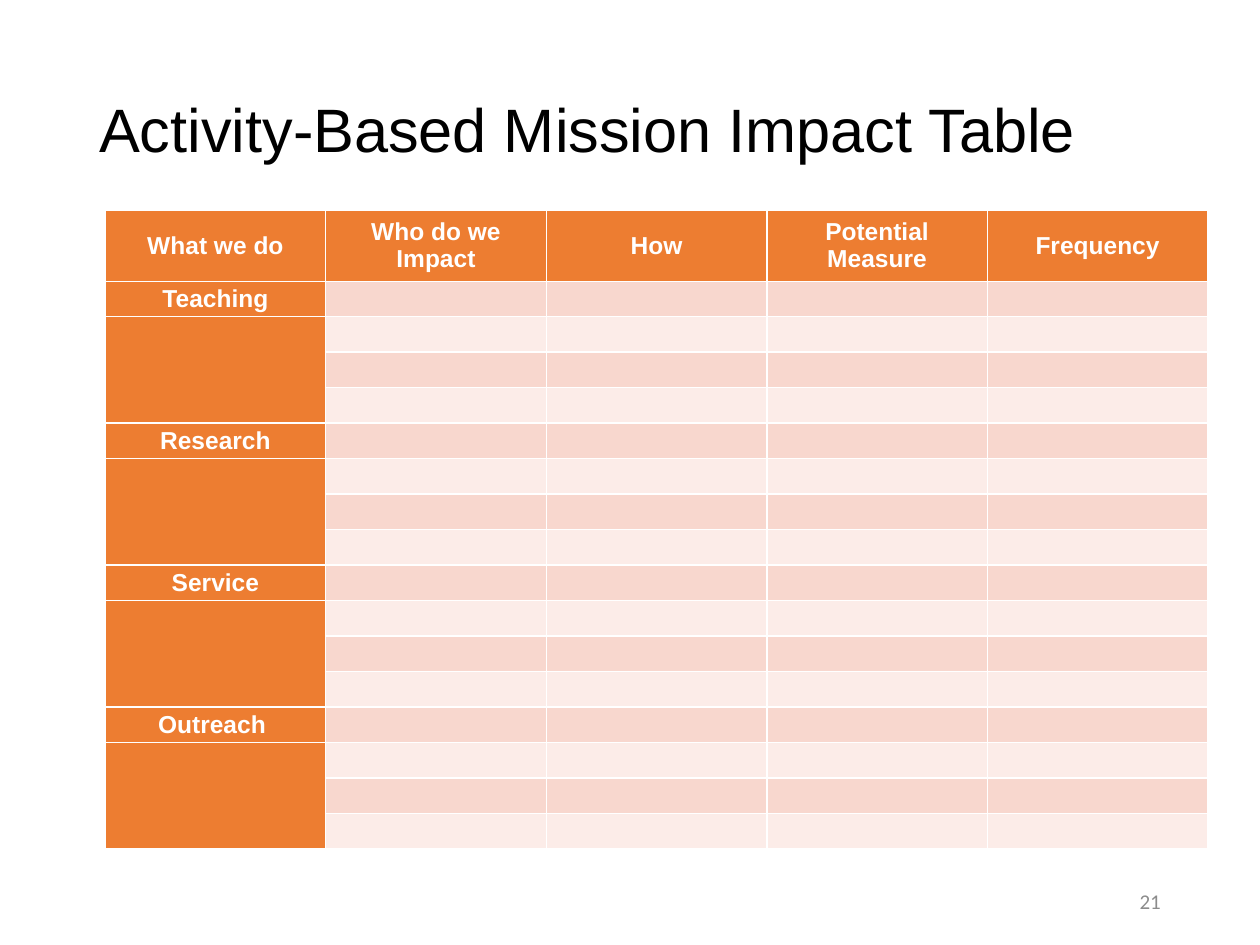
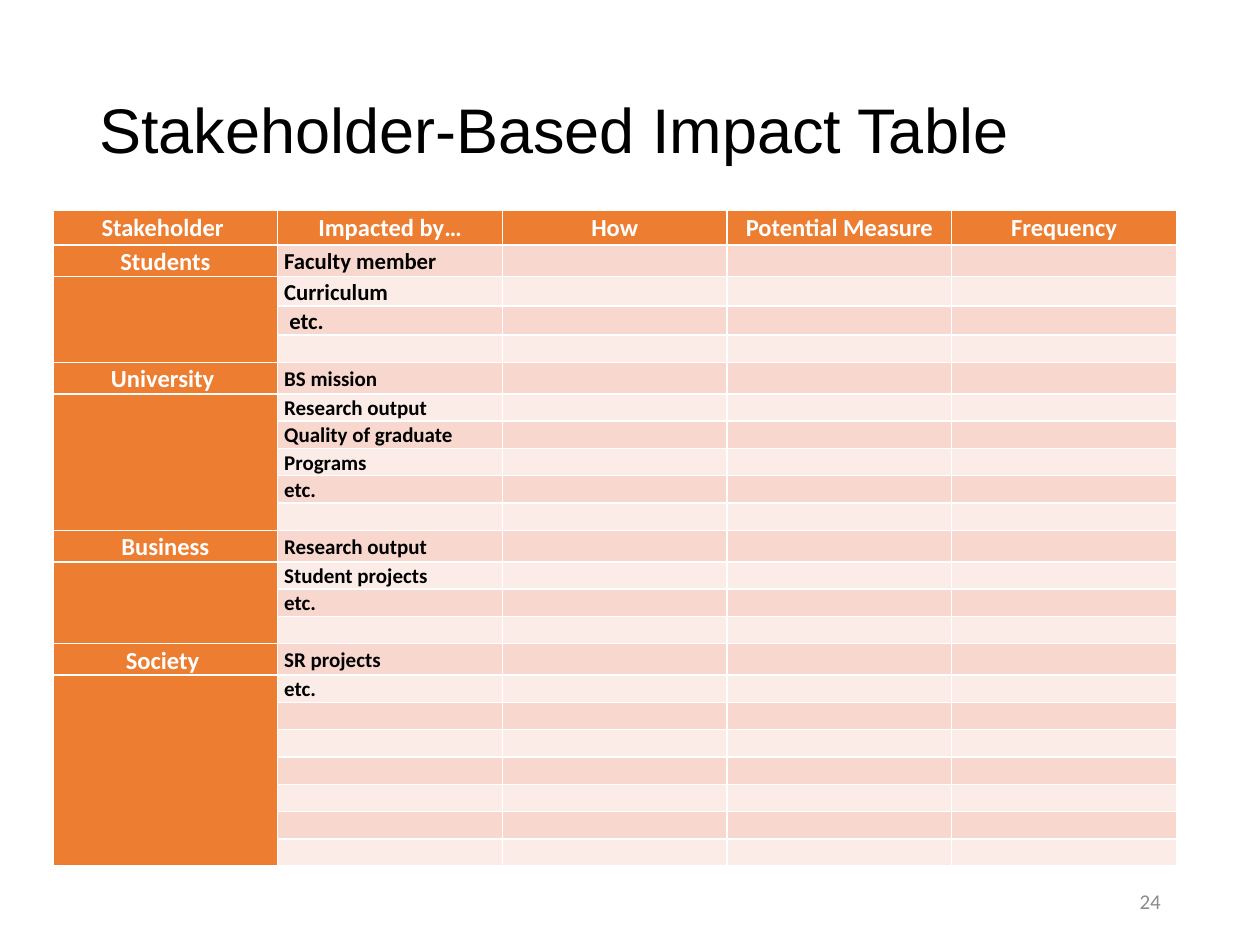
"""Build two impact-table slides."""
from lxml import etree
from pptx import Presentation
from pptx import util as u
from pptx.dml.color import RGBColor
from pptx.enum import text
from pptx.oxml.ns import qn

COLOURS = {
    "ink": "000000",
    "paper": "FFFFFF",
    "header": "ED7D31",
    "dark_band": "F8D7CE",
    "light_band": "FCECE8",
    "number": "8C8C8C",
}
TITLE_BOX = (1.75, 0.84, 21.9, 3.68)
NUMBER_BOX = (17.93, 17.65, 5.72, 1.02)
COLUMN_COUNT = 5

ACTIVITY = {
    "title": "Activity-Based Mission Impact Table",
    "title_size": 35,
    "number": "21",
    "box": (2.12, 4.23, 22.23, 12.88),
    "header_height": 1.44,
    "font": "Arial",
    "inset": 0.18,
    "spacing": 1.0,
    "headings": ["What we do", "Who do we Impact", "How", "Potential Measure", "Frequency"],
    "sections": [
        ("Teaching", 4, 12, []),
        ("Research", 4, 12, []),
        ("Service", 4, 12, []),
        ("Outreach ", 4, 12, []),
    ],
}
STAKEHOLDER = {
    "title": "Stakeholder-Based Impact Table",
    "title_size": 36,
    "number": "24",
    "box": (1.07, 4.23, 22.65, 12.81),
    "header_height": 0.71,
    "font": "Calibri",
    "inset": 0.13,
    "spacing": 1.07,
    "headings": ["Stakeholder ", "Impacted by…", "How", "Potential Measure", "Frequency"],
    "sections": [
        ("Students", 4, 13, ["Faculty member", "Curriculum", " etc."]),
        ("University ", 6, 12,
         ["BS mission", "Research output", "Quality of graduate", "Programs", "etc."]),
        ("Business", 4, 12, ["Research output", "Student projects", "etc."]),
        ("Society ", 8, 12, ["SR projects", "etc."]),
    ],
}


def colour(name):
    """Return the named colour."""
    return RGBColor.from_string(COLOURS[name])


def style(paragraph, font, size, ink, bold=False):
    """Format every run of a paragraph."""
    for run in paragraph.runs:
        run.font.name = font
        run.font.size = u.Pt(size)
        run.font.bold = bold
        run.font.color.rgb = colour(ink)


def add_line(slide, box, words, font, size, ink, align, spacing=1.0):
    """Place one vertically centred line of text in a box."""
    frame = slide.shapes.add_textbox(*map(u.Cm, box)).text_frame
    frame.word_wrap = True
    frame.vertical_anchor = text.MSO_ANCHOR.MIDDLE
    paragraph = frame.paragraphs[0]
    paragraph.text = words
    paragraph.alignment = align
    paragraph.line_spacing = spacing
    style(paragraph, font, size, ink)


def paint_cell(cell, fill):
    """Give a cell its white borders and its fill."""
    properties = cell._tc.get_or_add_tcPr()
    for side in ("lnL", "lnR", "lnT", "lnB"):
        border = etree.SubElement(properties, qn(f"a:{side}"), w=str(u.Pt(1)))
        solid = etree.SubElement(border, qn("a:solidFill"))
        etree.SubElement(solid, qn("a:srgbClr"), val=COLOURS["paper"])
    cell.fill.solid()
    cell.fill.fore_color.rgb = colour(fill)


def write_cell(cell, words, content, size, ink, align):
    """Write bold text in a cell."""
    paragraph = cell.text_frame.paragraphs[0]
    paragraph.text = words
    paragraph.alignment = align
    paragraph.line_spacing = content["spacing"]
    style(paragraph, content["font"], size, ink, bold=True)


def add_impact_table(slide, content):
    """Place the banded table with its merged section blocks."""
    left, top, width, height = content["box"]
    row_count = 1 + sum(section[1] for section in content["sections"])
    table = slide.shapes.add_table(
        row_count, COLUMN_COUNT, *map(u.Cm, content["box"])).table
    for column in table.columns:
        column.width = u.Cm(width / COLUMN_COUNT)
    body_height = height - content["header_height"]
    for index, row in enumerate(table.rows):
        row.height = u.Cm(body_height / (row_count - 1) if index else content["header_height"])
        band = "dark_band" if index % 2 else "light_band"
        for position, cell in enumerate(row.cells):
            paint_cell(cell, "header" if index == 0 or position == 0 else band)
            cell.vertical_anchor = text.MSO_ANCHOR.MIDDLE
            cell.margin_left = cell.margin_right = u.Cm(content["inset"])
            cell.margin_top = cell.margin_bottom = 0

    centre = text.PP_ALIGN.CENTER
    for position, heading in enumerate(content["headings"]):
        write_cell(table.cell(0, position), heading, content, 14, "paper", centre)
    first = 1
    for name, rows, size, impacts in content["sections"]:
        write_cell(table.cell(first, 0), name, content, 14, "paper", centre)
        table.cell(first + 1, 0).merge(table.cell(first + rows - 1, 0))
        for offset, impact in enumerate(impacts):
            write_cell(table.cell(first + offset, 1), impact, content, size, "ink",
                       text.PP_ALIGN.LEFT)
        first += rows

    for cell in table.iter_cells():
        if not cell.text_frame.text:
            etree.SubElement(cell.text_frame.paragraphs[0]._p, qn("a:endParaRPr"), sz="1000")


def add_impact_slide(deck, content):
    """Add a slide with title, table and slide number."""
    slide = deck.slides.add_slide(deck.slide_layouts[6])
    add_line(slide, TITLE_BOX, content["title"], "Arial", content["title_size"], "ink",
             text.PP_ALIGN.LEFT, 0.9)
    add_line(slide, NUMBER_BOX, content["number"], "Calibri", 12, "number",
             text.PP_ALIGN.RIGHT)
    add_impact_table(slide, content)


def main():
    """Build and save the deck."""
    deck = Presentation()
    deck.slide_width, deck.slide_height = u.Cm(25.4), u.Cm(19.05)
    for content in (ACTIVITY, STAKEHOLDER):
        add_impact_slide(deck, content)
    deck.save("out.pptx")


if __name__ == "__main__":
    main()
